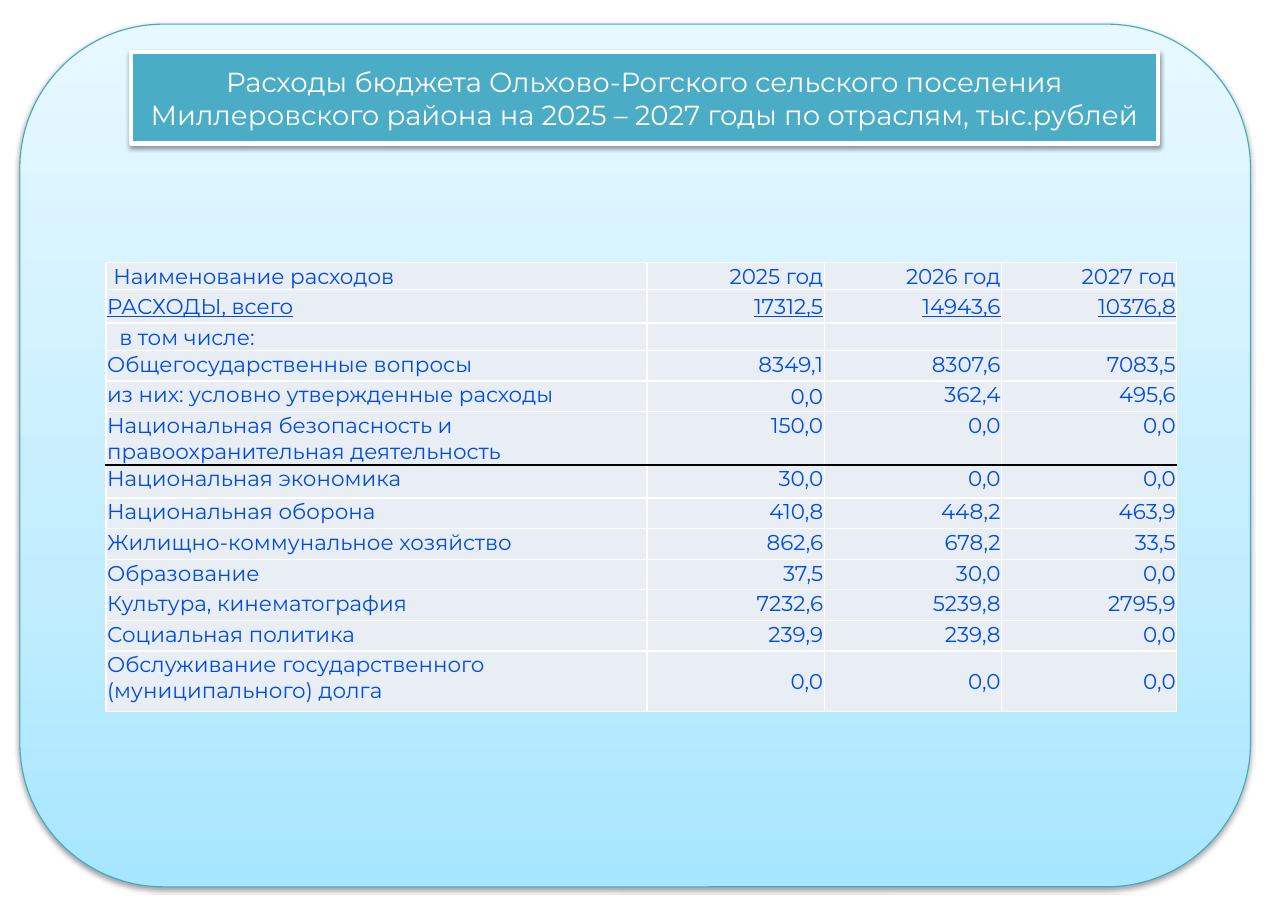
from copy import deepcopy
from dataclasses import dataclass

from lxml import etree
from pptx import Presentation
from pptx.dml.color import RGBColor
from pptx.enum import shapes, text
from pptx.oxml import ns
from pptx.util import Pt


@dataclass(frozen=True)
class Theme:
    font: str = "Montserrat"
    head: float = 18
    body: float = 14
    white: str = "FFFFFF"
    black: str = "000000"
    teal: str = "4BACC6"
    edge: str = "46AAC5"
    blue: str = "004DE6"
    cell: str = "E9EDF4"
    sky: tuple = ((0, "A7E6FF"), (0.35, "C1EDFF"), (1, "E7F8FF"))


THEME = Theme()
TITLE = ("Расходы бюджета Ольхово-Рогского сельского поселения "
         "Миллеровского района на 2025 – 2027 годы по отраслям, тыс.рублей")
WIDTHS = (353.5, 115.9, 115.9, 114.5)
ROWS = (
    (17.8, "Наименование расходов", "2025 год", "2026 год", "2027 год"),
    (22, "РАСХОДЫ, всего", "17312,5", "14943,6", "10376,8"),
    (17.8, "в том числе:", "", "", ""),
    (20, "Общегосударственные вопросы", "8349,1", "8307,6", "7083,5"),
    (20, "из них: условно утвержденные расходы", "0,0", "362,4", "495,6"),
    (35, "Национальная безопасность и правоохранительная деятельность",
     "150,0", "0,0", "0,0"),
    (21.6, "Национальная экономика", "30,0", "0,0", "0,0"),
    (20, "Национальная оборона", "410,8", "448,2", "463,9"),
    (20, "Жилищно-коммунальное хозяйство", "862,6", "678,2", "33,5"),
    (20, "Образование", "37,5", "30,0", "0,0"),
    (20, "Культура, кинематография", "7232,6", "5239,8", "2795,9"),
    (20, "Социальная политика", "239,9", "239,8", "0,0"),
    (39.6, "Обслуживание государственного (муниципального) долга",
     "0,0", "0,0", "0,0"),
)
TOTAL, PART, RULE, LAST = 1, 2, 5, len(ROWS) - 1
INDENT = {0: 4, PART: 8}
MIDDLE = {(r, c) for r in (0, TOTAL, PART, LAST) for c in range(1, 4)}
MIDDLE |= {(TOTAL, 0), (PART, 0), (4, 1)}


def color(code):
    return RGBColor.from_string(code)


def place(shape, left, top, width, height):
    shape.left, shape.top = Pt(left), Pt(top)
    shape.width, shape.height = Pt(width), Pt(height)


def outline(shape, code, width):
    shape.line.color.rgb = color(code)
    shape.line.width = Pt(width)


def shade(shape):
    shape.shadow.inherit = False
    effects = shape.element.spPr.find(ns.qn("a:effectLst"))
    outer = etree.SubElement(effects, ns.qn("a:outerShdw"), blurRad=str(Pt(3.1)),
                             dist=str(Pt(1.6)), dir="5400000", rotWithShape="0")
    tint = etree.SubElement(outer, ns.qn("a:srgbClr"), val=THEME.black)
    etree.SubElement(tint, ns.qn("a:alpha"), val="38000")


def style(para, size, code, align):
    para.alignment = align
    for run in para.runs:
        run.font.name = THEME.font
        run.font.size = Pt(size)
        run.font.color.rgb = color(code)


def add_title(slide):
    title = slide.shapes.title
    place(title, 85.7, 33.9, 671, 59.8)
    title.fill.solid()
    title.fill.fore_color.rgb = color(THEME.teal)
    outline(title, THEME.white, 3)
    shade(title)
    frame = title.text_frame
    frame.text = TITLE
    frame.word_wrap = True
    frame.auto_size = text.MSO_AUTO_SIZE.NONE
    frame.vertical_anchor = text.MSO_ANCHOR.MIDDLE
    style(frame.paragraphs[0], THEME.head, THEME.white, text.PP_ALIGN.CENTER)
    return title


def add_panel(slide, title):
    panel = slide.shapes.add_shape(shapes.MSO_SHAPE.ROUNDED_RECTANGLE,
                                   Pt(13), Pt(15.8), Pt(804.2), Pt(563.8))
    panel.fill.gradient()
    panel.fill.gradient_angle = 90
    stops = panel.element.spPr.find(".//" + ns.qn("a:gsLst"))
    stops.append(deepcopy(stops[0]))
    for stop, (spot, code) in zip(panel.fill.gradient_stops, THEME.sky):
        stop.color.rgb = color(code)
        stop.position = spot
    outline(panel, THEME.edge, 0.75)
    shade(panel)
    title.element.addprevious(panel.element)


def add_border(cell, sides):
    props = cell._tc.get_or_add_tcPr()
    for spot, (side, code) in enumerate(sides.items()):
        line = etree.Element(ns.qn("a:ln" + side), w=str(Pt(1)))
        fill = etree.SubElement(line, ns.qn("a:solidFill"))
        etree.SubElement(fill, ns.qn("a:srgbClr"), val=code)
        props.insert(spot, line)


def fill_cell(cell, row, col, words):
    cell.margin_left = Pt(0.72 + (INDENT.get(row, 0) if col == 0 else 0))
    cell.margin_right = cell.margin_top = Pt(0.72)
    cell.margin_bottom = 0
    middle = (row, col) in MIDDLE
    cell.vertical_anchor = text.MSO_ANCHOR.MIDDLE if middle else text.MSO_ANCHOR.TOP
    cell.fill.solid()
    cell.fill.fore_color.rgb = color(THEME.cell)
    sides = dict.fromkeys("LRTB", THEME.white)
    if row == RULE:
        sides["B"] = THEME.black
    if row == RULE + 1:
        sides["T"] = THEME.black
    add_border(cell, sides)
    para = cell.text_frame.paragraphs[0]
    if words:
        para.text = words
    else:
        etree.SubElement(para._p, ns.qn("a:endParaRPr"), sz=str(THEME.body * 100))
    align = text.PP_ALIGN.RIGHT if col else text.PP_ALIGN.LEFT
    style(para, THEME.body, THEME.blue, align)
    if row == TOTAL:
        para.runs[0].font.underline = True


def add_costs(slide):
    height = sum(row[0] for row in ROWS)
    frame = slide.shapes.add_table(len(ROWS), len(WIDTHS), Pt(69.3), Pt(171.4),
                                   Pt(sum(WIDTHS)), Pt(height))
    table = frame.table
    table.first_row = table.horz_banding = False
    for column, width in zip(table.columns, WIDTHS):
        column.width = Pt(width)
    for row, (tall, *words) in enumerate(ROWS):
        table.rows[row].height = Pt(tall)
        for col, word in enumerate(words):
            fill_cell(table.cell(row, col), row, col, word)


def main():
    deck = Presentation()
    deck.slide_width, deck.slide_height = Pt(841.68), Pt(594.72)
    slide = deck.slides.add_slide(deck.slide_layouts[5])
    title = add_title(slide)
    add_panel(slide, title)
    add_costs(slide)
    deck.save("out.pptx")


if __name__ == "__main__":
    main()
